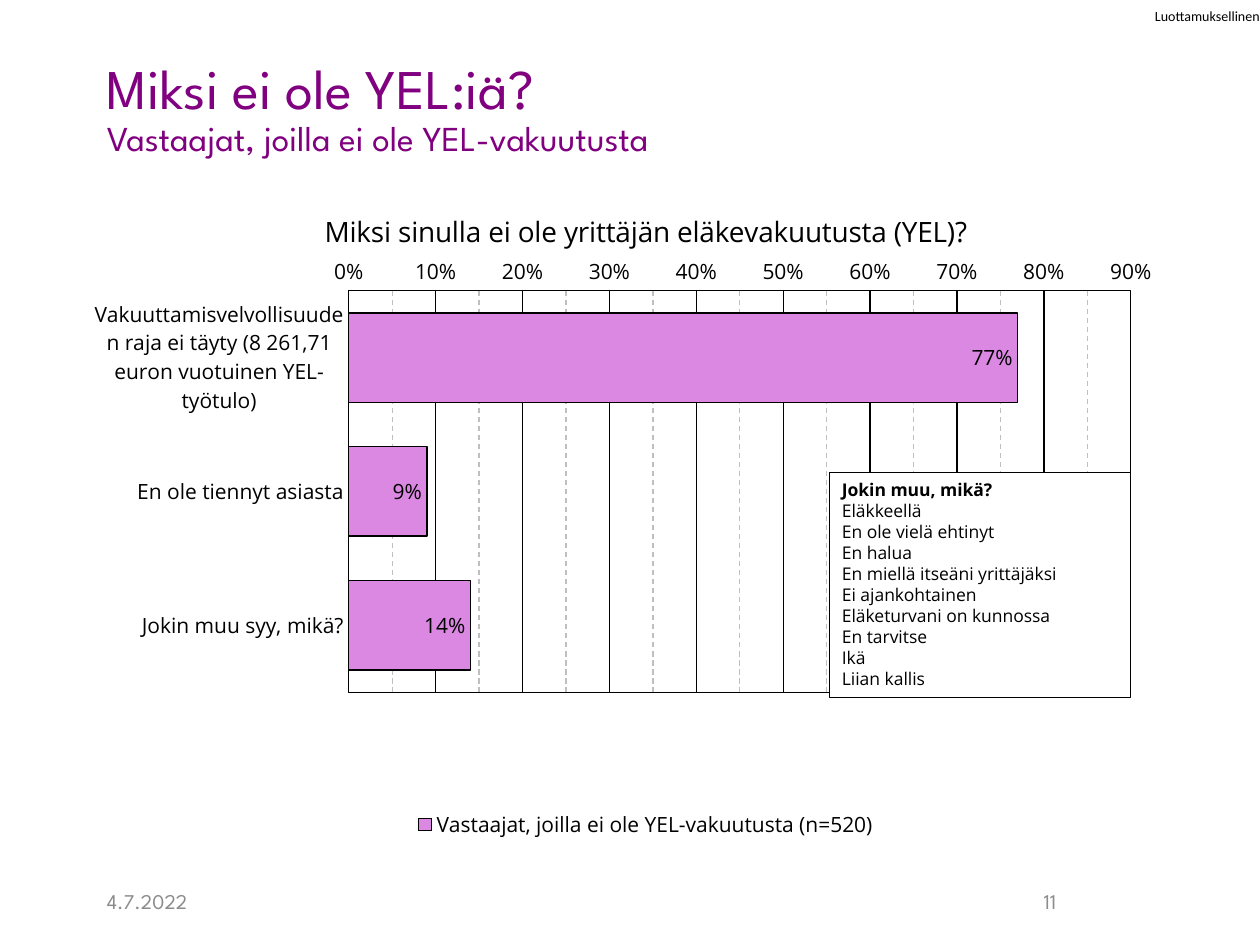
from dataclasses import dataclass

from pptx import Presentation
from pptx.chart.data import CategoryChartData
from pptx.dml.color import RGBColor
from pptx.enum.chart import (XL_AXIS_CROSSES, XL_CHART_TYPE, XL_LABEL_POSITION,
                             XL_LEGEND_POSITION, XL_TICK_MARK)
from pptx.enum.shapes import MSO_SHAPE
from pptx.enum.text import MSO_ANCHOR, PP_ALIGN
from pptx.oxml import parse_xml
from pptx.util import Pt


@dataclass(frozen=True)
class Theme:
    black: RGBColor = RGBColor(0x00, 0x00, 0x00)
    white: RGBColor = RGBColor(0xFF, 0xFF, 0xFF)
    purple: RGBColor = RGBColor(0x80, 0x00, 0x80)
    bar: RGBColor = RGBColor(0xDA, 0x88, 0xE2)
    footer: RGBColor = RGBColor(0x8C, 0x8C, 0x8C)
    minor_grid: RGBColor = RGBColor(0xBF, 0xBF, 0xBF)
    heading_font: str = "League Spartan"
    body_font: str = "Open Sans"
    marking_font: str = "Calibri"
    title_size: Pt = Pt(32)
    subtitle_size: Pt = Pt(20)
    chart_title_size: Pt = Pt(16)
    label_size: Pt = Pt(12)
    note_size: Pt = Pt(10)
    marking_size: Pt = Pt(8)
    line_width: Pt = Pt(0.75)


theme = Theme()


def add_run(paragraph, text, name, size, color, bold=False):
    run = paragraph.add_run()
    run.text = text
    run.font.name = name
    run.font.size = size
    run.font.bold = bold
    run.font.color.rgb = color


def add_text_box(left, top, width, height, anchor, alignment):
    """Add a wrapping text box and return its frame and first paragraph."""
    box = slide.shapes.add_textbox(Pt(left), Pt(top), Pt(width), Pt(height))
    frame = box.text_frame
    frame.word_wrap = True
    frame.vertical_anchor = anchor
    frame.paragraphs[0].alignment = alignment
    return frame, frame.paragraphs[0]


presentation = Presentation()
presentation.slide_width = Pt(720)
presentation.slide_height = Pt(540)
slide = presentation.slides.add_slide(presentation.slide_layouts[6])

# Confidentiality marking
frame, paragraph = add_text_box(640, 0, 80, 18, MSO_ANCHOR.MIDDLE, PP_ALIGN.RIGHT)
frame.margin_left = frame.margin_right = frame.margin_top = frame.margin_bottom = 0
add_run(paragraph, "Luottamuksellinen", theme.marking_font, theme.marking_size, theme.black)

# Title and subtitle
frame, paragraph = add_text_box(54, 16.5, 630, 78, MSO_ANCHOR.BOTTOM, PP_ALIGN.LEFT)
paragraph.line_spacing = 0.9
add_run(paragraph, "Miksi ei ole YEL:iä?", theme.heading_font, theme.title_size, theme.purple)
paragraph.add_line_break()
add_run(paragraph, "Vastaajat, joilla ei ole YEL-vakuutusta",
        theme.heading_font, theme.subtitle_size, theme.purple)

# Date and page number
for text, left, width, alignment in (
    ("4.7.2022", 54, 150.5, PP_ALIGN.LEFT),
    ("11", 516, 168, PP_ALIGN.CENTER),
):
    frame, paragraph = add_text_box(left, 500.5, width, 28.75, MSO_ANCHOR.MIDDLE, alignment)
    add_run(paragraph, text, theme.heading_font, theme.label_size, theme.footer)

# Bar chart of reasons
chart_data = CategoryChartData(number_format="0%")
chart_data.categories = [
    "Vakuuttamisvelvollisuuden raja ei täyty (8 261,71 euron vuotuinen YEL-työtulo)",
    "En ole tiennyt asiasta",
    "Jokin muu syy, mikä?",
]
chart_data.add_series("Vastaajat, joilla ei ole YEL-vakuutusta (n=520)", [0.77, 0.09, 0.14])
chart = slide.shapes.add_chart(XL_CHART_TYPE.BAR_CLUSTERED, Pt(54), Pt(105.8),
                               Pt(630), Pt(376.6), chart_data).chart
chart.font.name = theme.body_font
chart.font.size = theme.label_size
chart.font.color.rgb = theme.black
chart.has_title = True
add_run(chart.chart_title.text_frame.paragraphs[0],
        "Miksi sinulla ei ole yrittäjän eläkevakuutusta (YEL)?",
        theme.body_font, theme.chart_title_size, theme.black)
chart.has_legend = True
chart.legend.position = XL_LEGEND_POSITION.BOTTOM
chart.legend.include_in_layout = False
chart.legend.font.size = theme.label_size

category_axis = chart.category_axis
category_axis.reverse_order = True
category_axis.crosses = XL_AXIS_CROSSES.MAXIMUM
value_axis = chart.value_axis
value_axis.minimum_scale = 0
value_axis.maximum_scale = 0.9
value_axis.major_unit = 0.1
value_axis.minor_unit = 0.05
value_axis.has_major_gridlines = True
value_axis.has_minor_gridlines = True
value_axis.tick_labels.number_format = "0%"
value_axis.tick_labels.number_format_is_linked = False
for axis in (category_axis, value_axis):
    axis.major_tick_mark = XL_TICK_MARK.NONE
    axis.minor_tick_mark = XL_TICK_MARK.NONE
    axis.tick_labels.font.size = theme.label_size
value_axis.format.line.fill.background()

plot = chart.plots[0]
plot.gap_width = 50
plot.vary_by_categories = False
series = plot.series[0]
series.format.fill.solid()
series.format.fill.fore_color.rgb = theme.bar
for line in (category_axis.format.line, value_axis.major_gridlines.format.line,
             series.format.line):
    line.color.rgb = theme.black
    line.width = theme.line_width

labels = series.data_labels
labels.show_value = True
labels.position = XL_LABEL_POSITION.INSIDE_END
labels.number_format = "0%"
labels.number_format_is_linked = False
labels.font.size = theme.label_size

# Plot area: fixed inner layout, a thin frame and dashed minor gridlines
namespaces = ('xmlns:c="http://schemas.openxmlformats.org/drawingml/2006/chart" '
              'xmlns:a="http://schemas.openxmlformats.org/drawingml/2006/main"')
plot_area = chart._chartSpace.chart.plotArea
for layout in plot_area.xpath("c:layout"):
    plot_area.remove(layout)
plot_area.insert(0, parse_xml(
    f'<c:layout {namespaces}><c:manualLayout><c:layoutTarget val="inner"/>'
    '<c:xMode val="edge"/><c:yMode val="edge"/><c:x val="0.23"/><c:y val="0.16"/>'
    '<c:w val="0.71"/><c:h val="0.61"/></c:manualLayout></c:layout>'))
minor_gridlines = plot_area.xpath("c:valAx/c:minorGridlines")[0]
for parent, color, dash in ((plot_area, theme.black, "solid"),
                            (minor_gridlines, theme.minor_grid, "dash")):
    parent.append(parse_xml(
        f'<c:spPr {namespaces}><a:noFill/><a:ln w="{int(theme.line_width)}"><a:solidFill>'
        f'<a:srgbClr val="{color}"/></a:solidFill><a:prstDash val="{dash}"/></a:ln></c:spPr>'))

# Open answers
note = slide.shapes.add_shape(MSO_SHAPE.RECTANGLE, Pt(474), Pt(270), Pt(172), Pt(128.5))
note.shadow.inherit = False
note.fill.solid()
note.fill.fore_color.rgb = theme.white
note.line.color.rgb = theme.black
note.line.width = theme.line_width
frame = note.text_frame
frame.word_wrap = True
frame.vertical_anchor = MSO_ANCHOR.TOP
answers = ["Jokin muu, mikä?", "Eläkkeellä", "En ole vielä ehtinyt", "En halua",
           "En miellä itseäni yrittäjäksi", "Ei ajankohtainen",
           "Eläketurvani on kunnossa", "En tarvitse", "Ikä", "Liian kallis"]
for index, answer in enumerate(answers):
    paragraph = frame.add_paragraph() if index else frame.paragraphs[0]
    paragraph.alignment = PP_ALIGN.LEFT
    add_run(paragraph, answer, theme.body_font, theme.note_size, theme.black, bold=index == 0)

presentation.save("out.pptx")
